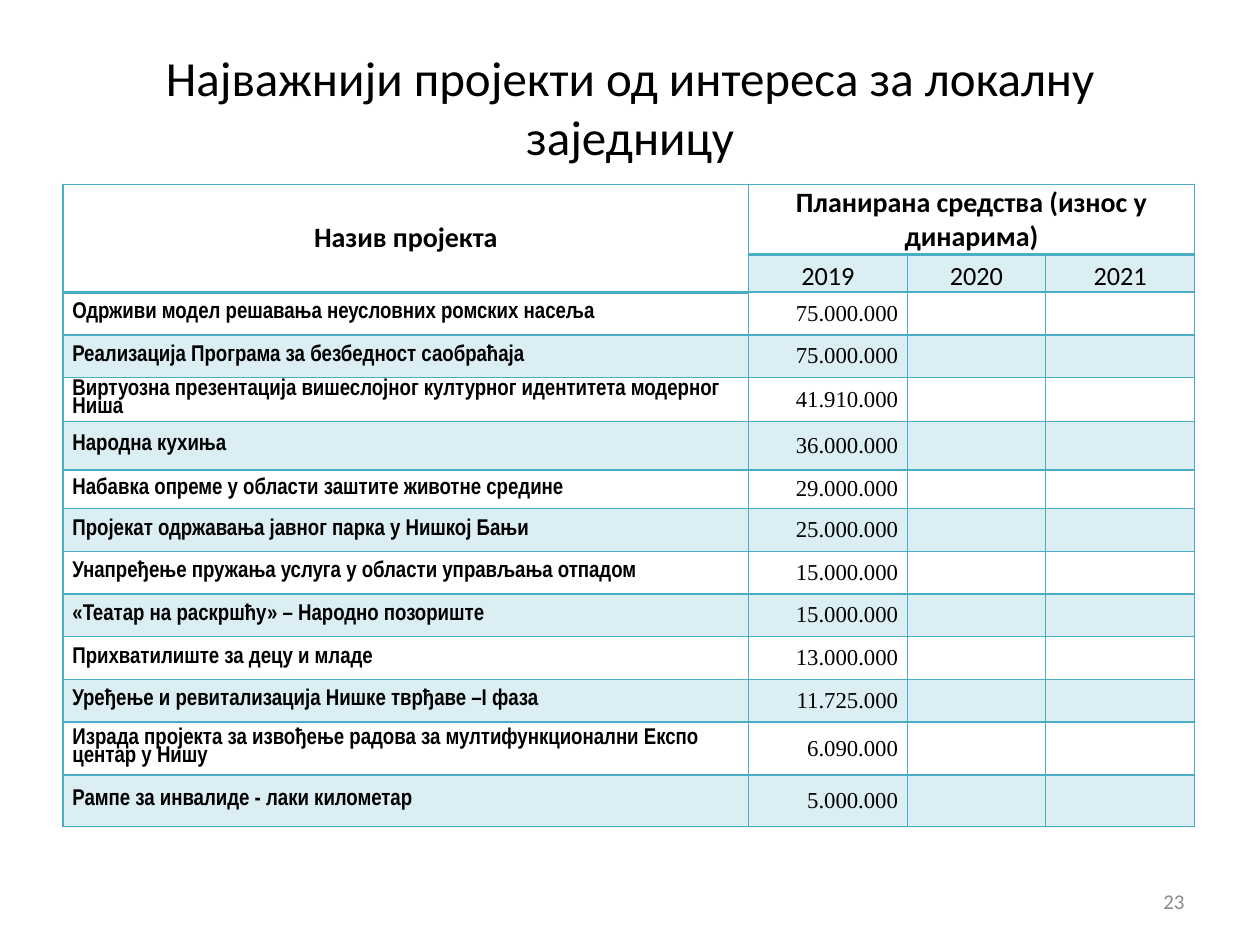
from dataclasses import dataclass

from lxml.etree import SubElement
from pptx import Presentation
from pptx.dml.color import RGBColor
from pptx.enum.text import MSO_ANCHOR as Anchor, PP_ALIGN as Align
from pptx.oxml.ns import qn
from pptx.util import Cm, Pt


@dataclass(frozen=True)
class Theme:
    """Colours, fonts and type sizes of the slide."""
    text: str = "000000"
    muted: str = "8C8C8C"
    accent: str = "4BACC6"
    tint_alpha: int = 20000
    heading_font: str = "Calibri"
    label_font: str = "Arial Narrow"
    amount_font: str = "Times New Roman"
    title_size: int = 28
    header_size: int = 16
    year_size: int = 15
    body_size: int = 13
    number_size: int = 12
    thin: int = 1
    thick: int = 2


THEME = Theme()
YEARS = ("2019", "2020", "2021")
COLUMN_WIDTHS = (13.82, 3.2, 2.79, 3)
HEADER_HEIGHTS = (1.41, 0.76)
ROW_HEIGHT = 0.86
PROJECTS = (
    ("Одрживи модел решавања неусловних ромских насеља", "75.000.000", ROW_HEIGHT),
    ("Реализација Програма за безбедност саобраћаја", "75.000.000", ROW_HEIGHT),
    ("Виртуозна презентација вишеслојног културног идентитета модерног Ниша",
     "41.910.000", ROW_HEIGHT),
    ("Народна кухиња", "36.000.000", 0.98),
    ("Набавка опреме у области заштите животне средине", "29.000.000", 0.78),
    ("Пројекат одржавања јавног парка у Нишкој Бањи", "25.000.000", ROW_HEIGHT),
    ("Унапређење пружања услуга у области управљања отпадом", "15.000.000", ROW_HEIGHT),
    ("«Театар на раскршћу» – Народно позориште", "15.000.000", ROW_HEIGHT),
    ("Прихватилиште за децу и младе", "13.000.000", ROW_HEIGHT),
    ("Уређење и ревитализација Нишке тврђаве –I фаза", "11.725.000", ROW_HEIGHT),
    ("Израда пројекта за извођење радова за мултифункционални Експо центар у Нишу",
     "6.090.000", 1.07),
    ("Рампе за инвалиде - лаки километар", "5.000.000", 1.04),
)


def write_text(frame, text, *, size, font=THEME.heading_font, color=THEME.text,
               bold=False, align=Align.CENTER, spacing=None):
    """Put one formatted paragraph into a text frame."""
    frame.word_wrap = True
    paragraph = frame.paragraphs[0]
    paragraph.alignment = align
    if spacing:
        paragraph.line_spacing = spacing
    run = paragraph.add_run()
    run.text = text
    run.font.name = font
    run.font.size = Pt(size)
    run.font.bold = bold
    run.font.color.rgb = RGBColor.from_string(color)


def add_title(slide, left, top, width, height):
    """Place and fill the title placeholder."""
    title = slide.shapes.title
    title.left, title.top, title.width, title.height = map(Cm, (left, top, width, height))
    title.text_frame.vertical_anchor = Anchor.MIDDLE
    write_text(title.text_frame, "Најважнији пројекти од интереса за локалну заједницу",
               size=THEME.title_size)


def add_page_number(slide, left, top, width, height):
    """Place the page number."""
    box = slide.shapes.add_textbox(*map(Cm, (left, top, width, height)))
    box.text_frame.vertical_anchor = Anchor.MIDDLE
    write_text(box.text_frame, "23", size=THEME.number_size, color=THEME.muted,
               align=Align.RIGHT)


def style_cell(cell, tinted, top_width, bottom_width):
    """Set the margins, borders and fill of a table cell."""
    cell.margin_left = cell.margin_right = Cm(0.19)
    cell.margin_top = cell.margin_bottom = 0
    cell.vertical_anchor = Anchor.MIDDLE
    properties = cell._tc.get_or_add_tcPr()
    borders = {"L": THEME.thin, "R": THEME.thin, "T": top_width, "B": bottom_width}
    for side, width in borders.items():
        line = SubElement(properties, qn(f"a:ln{side}"), w=str(Pt(width)))
        fill = SubElement(line, qn("a:solidFill"))
        SubElement(fill, qn("a:srgbClr"), val=THEME.accent)
    if not tinted:
        cell.fill.background()
        return
    cell.fill.solid()
    cell.fill.fore_color.rgb = RGBColor.from_string(THEME.accent)
    color = properties.find(f"{qn('a:solidFill')}/{qn('a:srgbClr')}")
    SubElement(color, qn("a:alpha"), val=str(THEME.tint_alpha))


def fill_header(table):
    """Merge and fill the two header rows."""
    name, funds = table.cell(0, 0), table.cell(0, 1)
    name.merge(table.cell(1, 0))
    funds.merge(table.cell(0, len(YEARS)))
    funds.vertical_anchor = Anchor.BOTTOM
    for cell, text in ((name, "Назив пројекта"),
                       (funds, "Планирана средства (износ у динарима)")):
        write_text(cell.text_frame, text, size=THEME.header_size, bold=True)
    for column, year in enumerate(YEARS, 1):
        cell = table.cell(1, column)
        cell.vertical_anchor = Anchor.BOTTOM
        write_text(cell.text_frame, year, size=THEME.year_size)


def add_project_table(slide, left, top):
    """Build the table of projects and planned funds."""
    heights = HEADER_HEIGHTS + tuple(height for _, _, height in PROJECTS)
    frame = slide.shapes.add_table(len(heights), len(COLUMN_WIDTHS), Cm(left), Cm(top),
                                   Cm(sum(COLUMN_WIDTHS)), Cm(sum(heights)))
    table = frame.table
    table.first_row = table.horz_banding = False
    for column, width in zip(table.columns, COLUMN_WIDTHS):
        column.width = Cm(width)
    for index, (row, height) in enumerate(zip(table.rows, heights)):
        row.height = Cm(height)
        for column, cell in enumerate(row.cells):
            header_end = 0 if column else 1
            style_cell(cell, index % 2 == 1 and (index > 1 or column > 0),
                       THEME.thick if index == header_end + 1 else THEME.thin,
                       THEME.thick if index in (0, header_end) else THEME.thin)
    fill_header(table)
    for index, (name, amount, _) in enumerate(PROJECTS, len(HEADER_HEIGHTS)):
        write_text(table.cell(index, 0).text_frame, name, size=THEME.body_size,
                   font=THEME.label_font, bold=True, align=Align.LEFT, spacing=0.8)
        write_text(table.cell(index, 1).text_frame, amount, size=THEME.body_size,
                   font=THEME.amount_font, align=Align.RIGHT)


def main():
    """Create the presentation with its single slide."""
    presentation = Presentation()
    presentation.slide_width, presentation.slide_height = Cm(25.4), Cm(19.05)
    slide = presentation.slides.add_slide(presentation.slide_layouts[5])
    add_title(slide, 1.27, 0.76, 22.86, 2.77)
    add_page_number(slide, 18.2, 17.66, 5.93, 1.01)
    add_project_table(slide, 1.27, 3.72)
    presentation.save("out.pptx")


if __name__ == "__main__":
    main()
